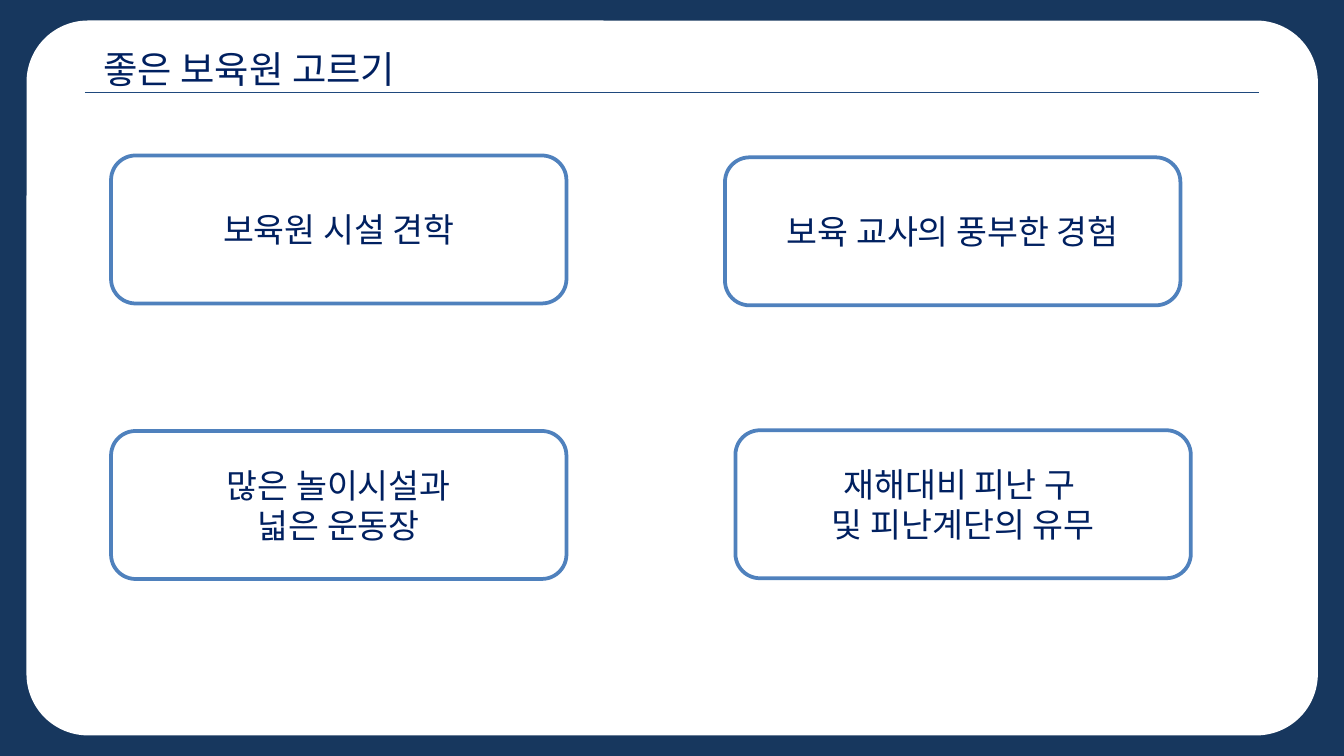
"""Build a slide on choosing a good nursery, with four criteria in boxes."""
from lxml import etree
from pptx import Presentation
from pptx.dml.color import RGBColor
from pptx.enum.shapes import MSO_CONNECTOR, MSO_SHAPE
from pptx.enum.text import MSO_ANCHOR, MSO_AUTO_SIZE, PP_ALIGN
from pptx.oxml.ns import qn
from pptx.util import Pt

ROUND = MSO_SHAPE.ROUNDED_RECTANGLE
LINE = MSO_CONNECTOR.STRAIGHT
MIDDLE = MSO_ANCHOR.MIDDLE
GROW = MSO_AUTO_SIZE.SHAPE_TO_FIT_TEXT
LEFT, CENTER = PP_ALIGN.LEFT, PP_ALIGN.CENTER

FRAME = RGBColor(0x17, 0x37, 0x5E)
WHITE = RGBColor(0xFF, 0xFF, 0xFF)
RULE = RGBColor(0x1F, 0x49, 0x7D)
EDGE = RGBColor(0x4F, 0x81, 0xBD)
INK = RGBColor(0x00, 0x20, 0x60)
FONT = "Noto Sans CJK KR"


def write(frame, text, size=18, color=INK, align=CENTER):
    frame.word_wrap = True
    frame.text = text
    for para in frame.paragraphs:
        para.alignment = align
        for run in para.runs:
            font = run.font
            font.size, font.name = Pt(size), FONT
            font.color.rgb = color
            east = etree.SubElement(run._r.get_or_add_rPr(), qn("a:ea"))
            east.set("typeface", FONT)


def add_box(left, top, width, height):
    box = shapes.add_shape(ROUND, Pt(left), Pt(top), Pt(width), Pt(height))
    box.shadow.inherit = False
    box.fill.solid()
    box.fill.fore_color.rgb = WHITE
    return box


deck = Presentation()
deck.slide_width, deck.slide_height = Pt(720), Pt(405)
slide = deck.slides.add_slide(deck.slide_layouts[6])
shapes = slide.shapes
slide.background.fill.solid()
slide.background.fill.fore_color.rgb = FRAME

panel = add_box(14.2, 11, 691.8, 383)
panel.adjustments[0] = 0.086
panel.line.fill.background()

rule = shapes.add_connector(LINE, Pt(45.5), Pt(49.5), Pt(674.5), Pt(49.5))
rule.line.color.rgb = RULE
rule.line.width = Pt(0.75)
etree.SubElement(rule._element.spPr, qn("a:effectLst"))

title = shapes.add_textbox(Pt(48.4), Pt(21), Pt(255), Pt(31.5))
write(title.text_frame, "좋은 보육원 고르기", size=20, align=LEFT)
title.text_frame.auto_size = GROW

TIPS = [
    (59.5, 83.3, "보육원 시설 견학"),
    (59.5, 230.9, "많은 놀이시설과\n넓은 운동장"),
    (388.4, 84.3, "보육 교사의 풍부한 경험"),
    (394, 230.5, "재해대비 피난 구 \n및 피난계단의 유무"),
]
for left, top, text in TIPS:
    tip = add_box(left, top, 244, 79.3)
    tip.line.color.rgb = EDGE
    tip.line.width = Pt(2)
    tip.text_frame.vertical_anchor = MIDDLE
    write(tip.text_frame, text)

deck.save("out.pptx")
